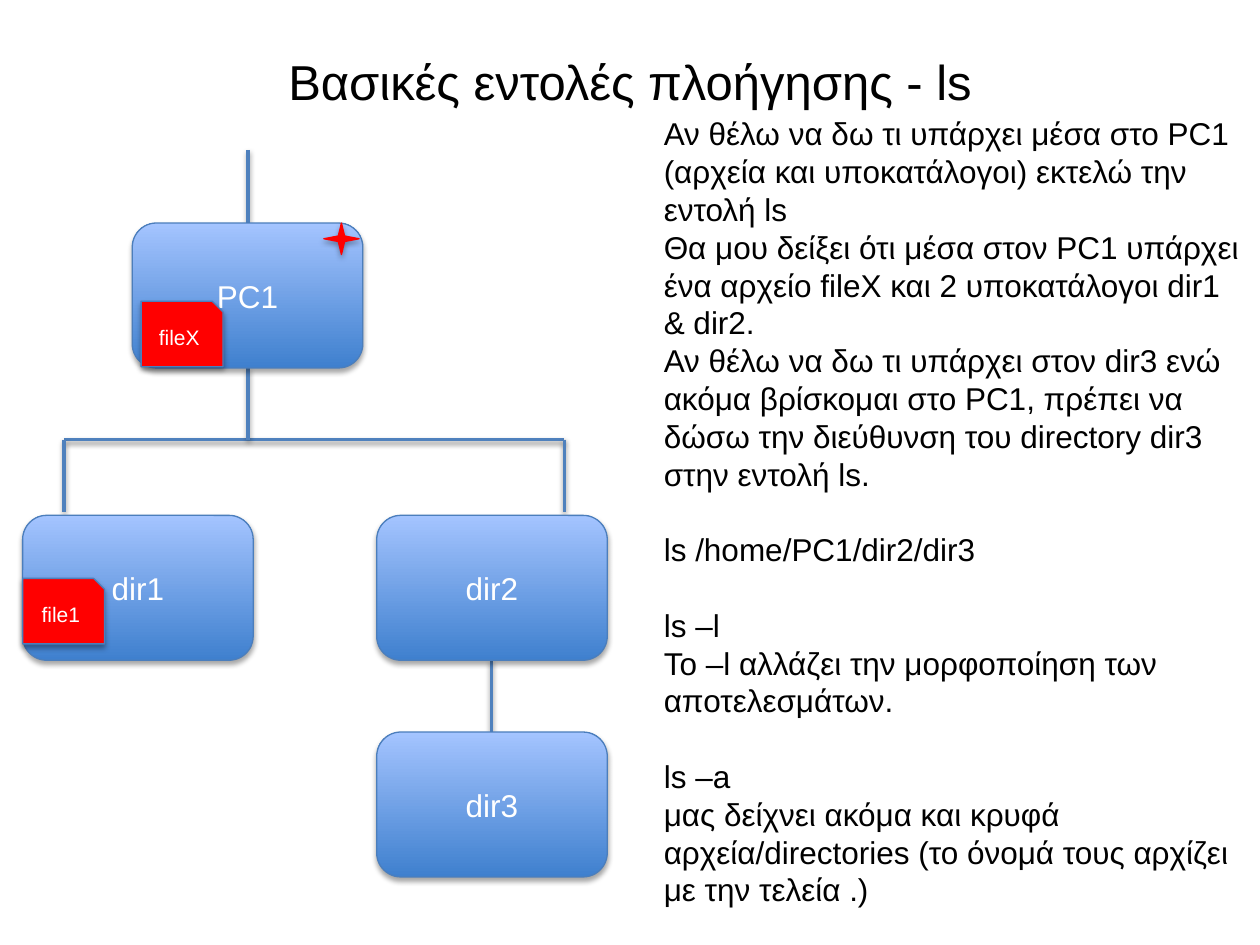
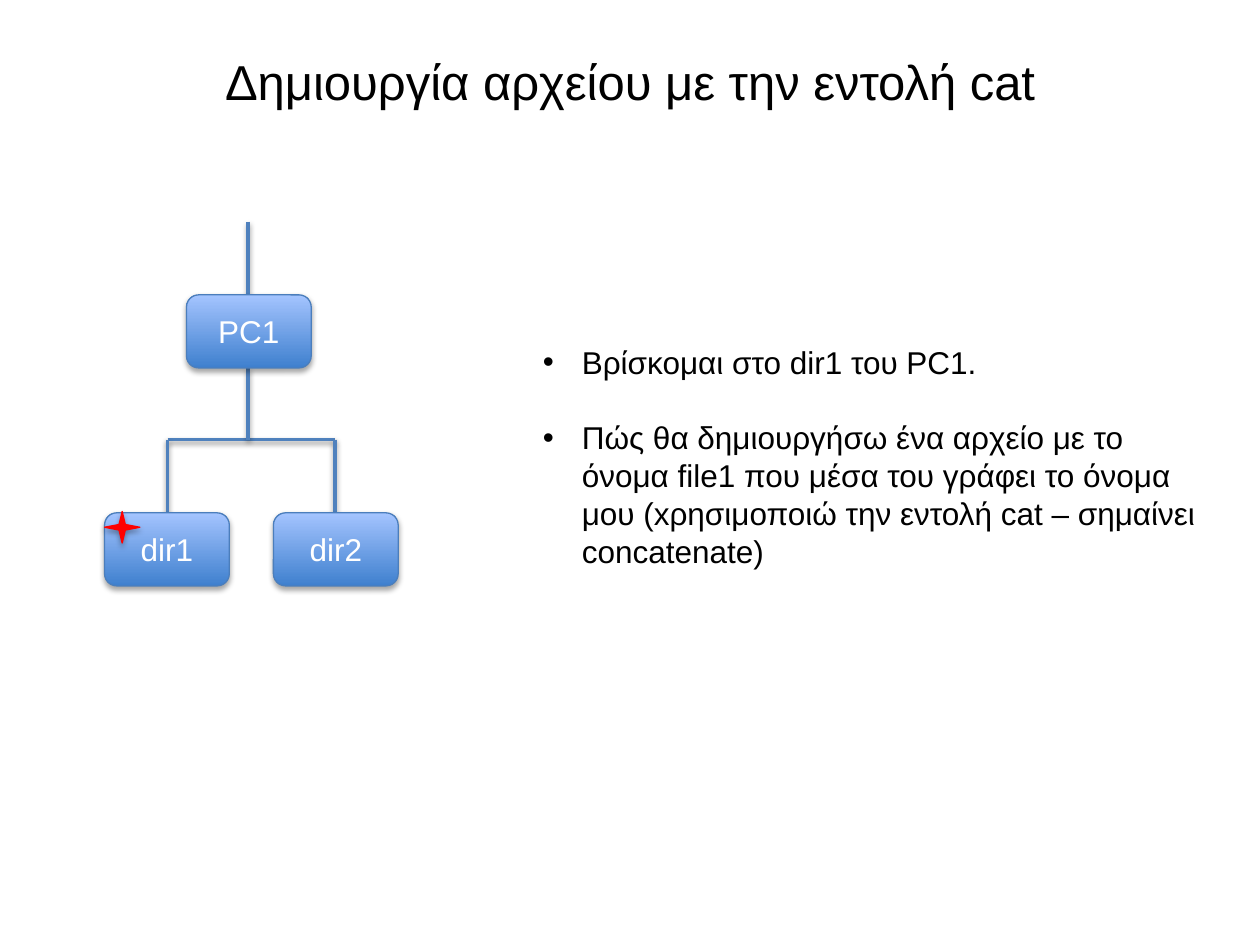
from lxml import etree
from pptx import Presentation, util as u
from pptx.dml.color import RGBColor
from pptx.enum import shapes, text
from pptx.oxml.ns import qn

FONT = "Arial"
BLACK, WHITE, RED = "000000", "FFFFFF", "FF0000"
EDGE, WIRE = "4B7EBC", "4F81BD"
BOX_GRADIENT = ("3F80CE", "A4C4FF")
BODY_SIZE = 18
LINE_HEIGHT = 21.6


def color(hex_code):
    return RGBColor.from_string(hex_code)


def add_child(parent, tag, **attributes):
    child = etree.SubElement(parent, qn(tag))
    for name, value in attributes.items():
        child.set(name, str(value))
    return child


def write(paragraph, content, size=BODY_SIZE, ink=BLACK, align=None, before=0, bullet=False):
    """Put formatted text in a paragraph."""
    run = paragraph.add_run()
    run.text = content
    run.font.name, run.font.size = FONT, u.Pt(size)
    run.font.color.rgb = color(ink)
    paragraph.alignment = align
    paragraph.space_before = u.Pt(before)
    if bullet:
        properties = paragraph._p.get_or_add_pPr()
        indent = u.Inches(0.31)
        properties.set("marL", str(indent))
        properties.set("indent", str(-indent))
        add_child(properties, "a:buFont", typeface=FONT)
        add_child(properties, "a:buChar", char="•")


def add_shadow(shape, opacity, distance):
    """Cast a soft shadow straight down."""
    effects = add_child(shape._element.spPr, "a:effectLst")
    outer = add_child(effects, "a:outerShdw", blurRad=u.Pt(3.1), dist=u.Pt(distance),
                      dir=90 * 60000, rotWithShape=0)
    add_child(add_child(outer, "a:srgbClr", val=BLACK), "a:alpha", val=opacity * 1000)


class Deck:
    def __init__(self):
        self.presentation = Presentation()
        self.presentation.slide_width = u.Inches(10)
        self.presentation.slide_height = u.Inches(7.5)
        self.slide = None

    def new_slide(self, heading):
        self.slide = self.presentation.slides.add_slide(self.presentation.slide_layouts[5])
        title = self.slide.shapes.title
        title.left, title.top = u.Inches(0.5), u.Inches(0.3)
        title.width, title.height = u.Inches(9), u.Inches(0.68)
        title.text_frame.vertical_anchor = text.MSO_ANCHOR.MIDDLE
        write(title.text_frame.paragraphs[0], heading, size=28, align=text.PP_ALIGN.CENTER)

    def shape(self, kind, left, top, width, height, label="", size=BODY_SIZE, fill=RED, edge=EDGE):
        shape = self.slide.shapes.add_shape(kind, *map(u.Inches, (left, top, width, height)))
        if isinstance(fill, tuple):
            shape.fill.gradient()
            shape.fill.gradient_angle = 90
            for stop, shade in zip(shape.fill.gradient_stops, fill):
                stop.color.rgb = color(shade)
        else:
            shape.fill.solid()
            shape.fill.fore_color.rgb = color(fill)
        shape.line.color.rgb = color(edge)
        shape.line.width = u.Pt(0.75)
        add_shadow(shape, opacity=35, distance=1.8)
        if label:
            shape.text_frame.vertical_anchor = text.MSO_ANCHOR.MIDDLE
            write(shape.text_frame.paragraphs[0], label, size, WHITE, text.PP_ALIGN.CENTER)

    def directory(self, label, left, top, size):
        self.shape(shapes.MSO_SHAPE.ROUNDED_RECTANGLE, left, top, *size, label, fill=BOX_GRADIENT)

    def file(self, label, left, top):
        self.shape(shapes.MSO_SHAPE.SNIP_1_RECTANGLE, left, top, 0.65, 0.52, label, size=12)

    def star(self, left, top):
        self.shape(shapes.MSO_SHAPE.STAR_4_POINT, left, top, 0.28, 0.25, edge=RED)

    def wire(self, x1, y1, x2, y2):
        line = self.slide.shapes.add_connector(
            shapes.MSO_CONNECTOR.STRAIGHT, *map(u.Inches, (x1, y1, x2, y2)))
        line.line.color.rgb = color(WIRE)
        line.line.width = u.Pt(2)
        add_shadow(line, opacity=38, distance=1.6)

    def branches(self, trunk, left, right, root_top, bottom):
        """Draw the wires above and below the root directory."""
        fork = 3.49
        self.wire(left, fork, right, fork)
        self.wire(trunk, root_top - 0.58, trunk, root_top)
        self.wire(trunk, 2.92, trunk, fork)
        for end in (left, right):
            self.wire(end, fork, end, bottom)

    def notes(self, left, top, width, height, groups, bullet=False):
        """Write groups of paragraphs, one line of space between groups."""
        box = self.slide.shapes.add_textbox(*map(u.Inches, (left, top, width, height)))
        frame = box.text_frame
        frame.word_wrap = True
        paragraph = frame.paragraphs[0]
        for group_index, group in enumerate(groups):
            for index, content in enumerate(group):
                if group_index or index:
                    paragraph = frame.add_paragraph()
                gap = LINE_HEIGHT if group_index and index == 0 else 0
                write(paragraph, content, before=gap, bullet=bullet)


def build_ls_slide(deck):
    deck.new_slide("Βασικές εντολές πλοήγησης - ls")
    size = (1.83, 1.15)

    # Directory tree
    deck.branches(trunk=1.97, left=0.51, right=4.48, root_top=1.77, bottom=4.06)
    deck.wire(3.9, 5.24, 3.9, 5.81)
    for label, left, top in (("PC1", 1.05, 1.77), ("dir1", 0.18, 4.09),
                             ("dir2", 2.99, 4.09), ("dir3", 2.99, 5.81)):
        deck.directory(label, left, top, size)

    # Files and current position
    deck.file("file1", 0.18, 4.59)
    deck.file("fileΧ", 1.12, 2.39)
    deck.star(2.57, 1.77)

    # Explanation
    deck.notes(5.17, 0.86, 4.83, 6.46, [
        ["Αν θέλω να δω τι υπάρχει μέσα στο PC1 (αρχεία και υποκατάλογοι) εκτελώ την εντολή ls",
         "Θα μου δείξει ότι μέσα στον PC1 υπάρχει ένα αρχείο fileX και 2 υποκατάλογοι dir1 & dir2.",
         "Αν θέλω να δω τι υπάρχει στον dir3 ενώ ακόμα βρίσκομαι στο PC1, πρέπει να δώσω την "
         "διεύθυνση του directory dir3 στην εντολή ls."],
        ["ls /home/PC1/dir2/dir3"],
        ["ls –l", "To –l αλλάζει την μορφοποίηση των αποτελεσμάτων."],
        ["ls –a",
         "μας δείχνει ακόμα και κρυφά αρχεία/directories (το όνομά τους αρχίζει με την τελεία .)"],
    ])


def build_cat_slide(deck):
    deck.new_slide("Δημιουργία αρχείου με την εντολή cat")
    size = (0.99, 0.58)

    # Directory tree and current position
    deck.branches(trunk=1.97, left=1.33, right=2.66, root_top=2.34, bottom=4.07)
    for label, left, top in (("PC1", 1.48, 2.34), ("dir1", 0.83, 4.07), ("dir2", 2.17, 4.07)):
        deck.directory(label, left, top, size)
    deck.star(0.83, 4.06)

    # Task
    deck.notes(4.21, 2.67, 5.4, 1.92, [
        ["Βρίσκομαι στο dir1 του PC1."],
        ["Πώς θα δημιουργήσω ένα αρχείο με το όνομα file1 που μέσα του γράφει το όνομα μου "
         "(xρησιμοποιώ την εντολή cat – σημαίνει concatenate)"],
    ], bullet=True)


def main():
    deck = Deck()
    build_ls_slide(deck)
    build_cat_slide(deck)
    deck.presentation.save("out.pptx")


if __name__ == "__main__":
    main()
